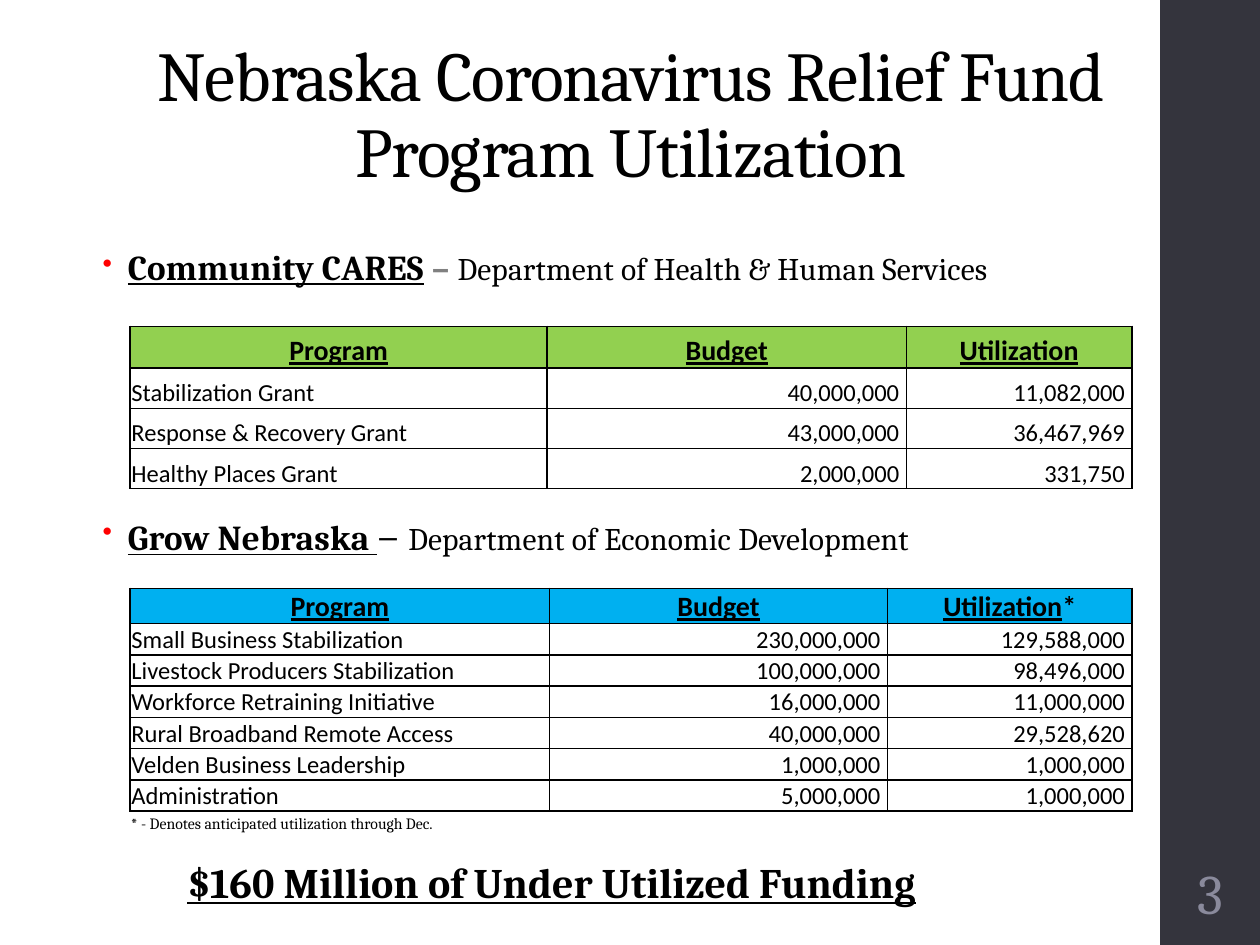
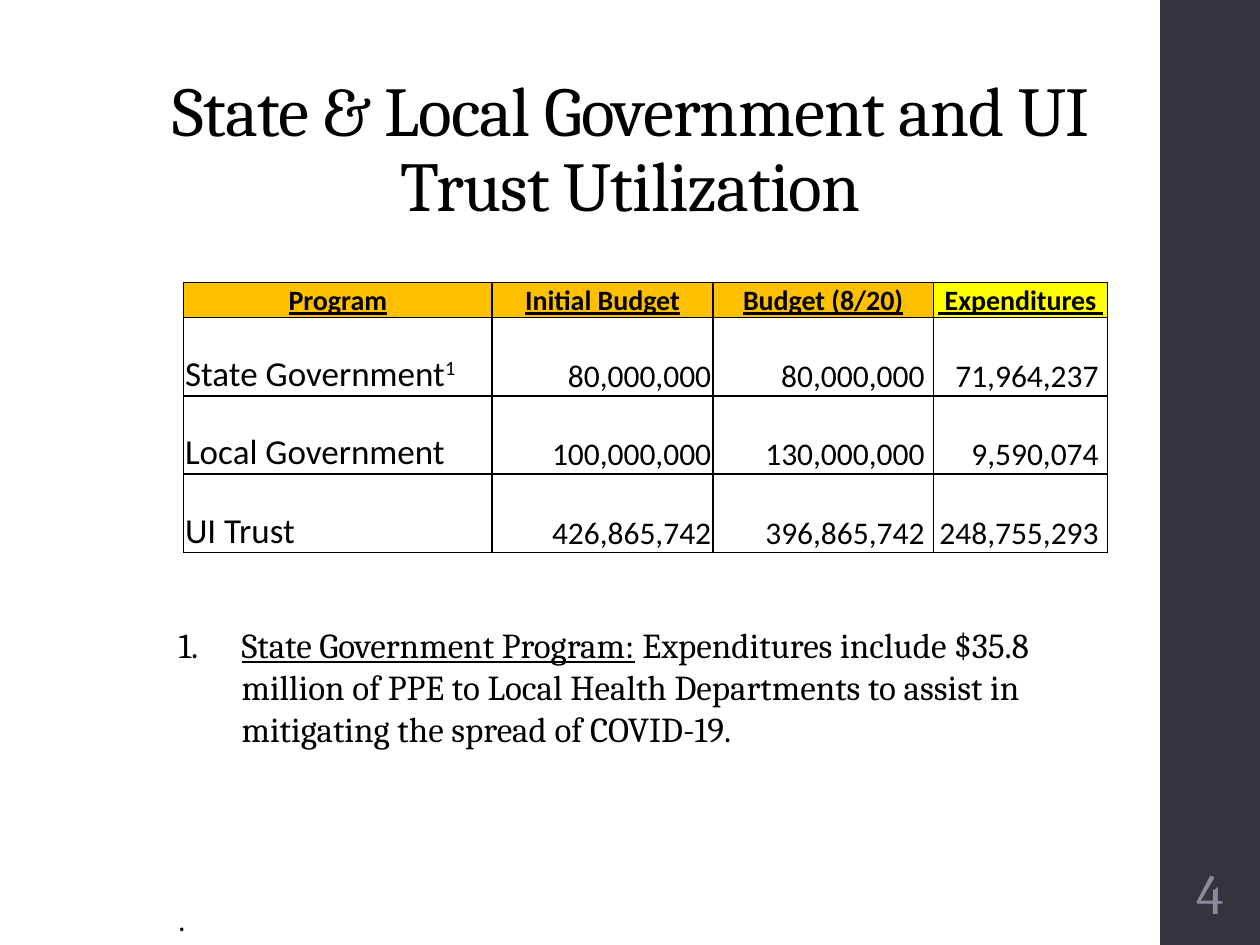
"""Build two slides on relief fund budgets and their utilization."""
from lxml import etree
from pptx import Presentation
from pptx import util as u
from pptx.dml.color import RGBColor
from pptx.enum import shapes, text
from pptx.oxml.ns import qn

SERIF, SANS = "Cambria", "Calibri"
BLACK, BAND, PALE, GREY, RED = "000000", "34343D", "8A8A9C", "808080", "FF0000"
GREEN, BLUE, GOLD, YELLOW = "92D050", "00B0F0", "FFC000", "FFFF00"
ALIGN = text.PP_ALIGN
BOLD, LINE, BOTH = {"bold": True}, {"underline": True}, {"bold": True, "underline": True}

CARES = {
    "at": (2.62, 6.58), "cols": (8.41, 7.24, 4.55), "rows": (0.84, 0.81),
    "fills": (GREEN,) * 3, "sizes": (14, 14, 14), "pads": (0.03, 0.14, 0.14),
    "head": ("Program", "Budget", "Utilization"),
    "body": [
        ("Stabilization Grant", "40,000,000", "11,082,000"),
        ("Response & Recovery Grant", "43,000,000", "36,467,969"),
        ("Healthy Places Grant", "2,000,000", "331,750"),
    ],
}
GROW = {
    "at": (2.62, 11.86), "cols": (8.46, 6.81, 4.93), "rows": (0.71, 0.63),
    "fills": (BLUE,) * 3, "sizes": (14, 14, 14), "pads": (0.03, 0.14, 0.14),
    "head": ("Program", "Budget", [("Utilization", BOTH), ("*", BOLD)]),
    "body": [
        ("Small Business Stabilization", "230,000,000", "129,588,000"),
        ("Livestock Producers Stabilization", "100,000,000", "98,496,000"),
        ("Workforce Retraining Initiative", "16,000,000", "11,000,000"),
        ("Rural Broadband Remote Access", "40,000,000", "29,528,620"),
        ("Velden Business Leadership", "1,000,000", "1,000,000"),
        ("Administration", "5,000,000", "1,000,000"),
    ],
}
STATE = {
    "at": (3.7, 5.69), "cols": (6.22, 4.45, 4.45, 3.51), "rows": (0.71, 1.58),
    "fills": (GOLD, GOLD, GOLD, YELLOW), "sizes": (20, 18, 18, 18),
    "pads": (0.03, 0.03, 0.18, 0.18),
    "head": ("Program", "Initial Budget", "Budget (8/20)", " Expenditures "),
    "body": [
        ([("State Government", {}), ("1", {"raised": True})],
         "80,000,000", "80,000,000", "71,964,237"),
        ("Local Government", "100,000,000", "130,000,000", "9,590,074"),
        ("UI Trust", "426,865,742", "396,865,742", "248,755,293"),
    ],
}
HEADS = [
    (4.88, [("Community CARES", BOTH), (" ", BOLD), ("– ", {"bold": True, "color": GREY}),
            ("Department of Health & Human Services", {"size": 18})]),
    (10.21, [("Grow Nebraska ", BOTH), ("– ", {"size": 24}),
             ("Department of Economic Development", {"size": 18})]),
]
NOTE = [
    ("State Government Program:", LINE),
    (" Expenditures include $35.8 million of PPE to Local Health Departments"
     " to assist in mitigating the spread of COVID-19.", {}),
]
SLIDES = [
    {"title": "Nebraska Coronavirus Relief Fund Program Utilization",
     "top": 0.33, "page": "3", "tables": [CARES, GROW]},
    {"title": "State & Local Government and UI Trust Utilization",
     "top": 1.02, "page": "4", "tables": [STATE]},
]


def rgb(code):
    """Turn a hex string into a colour."""
    return RGBColor.from_string(code)


def node(root, tag, **attrs):
    """Append a drawing element with attributes."""
    return etree.SubElement(root, qn("a:" + tag), {k: str(v) for k, v in attrs.items()})


def write(par, runs, size, face=SERIF, color=BLACK, align=ALIGN.LEFT, track=0, base=None):
    """Write plain text or styled runs into a paragraph."""
    font = par.font
    font.name, font.size, font.color.rgb = face, u.Pt(size), rgb(color)
    par.alignment = align
    for words, style in [(runs, {})] if isinstance(runs, str) else runs:
        style = {**(base or {}), **style}
        run = par.add_run()
        run.text = words
        font = run.font
        font.name, font.size = face, u.Pt(style.get("size", size))
        font.color.rgb = rgb(style.get("color", color))
        font.bold, font.underline = style.get("bold", False), style.get("underline", False)
        props = run._r.get_or_add_rPr()
        if track:
            props.set("spc", str(track))
        if style.get("raised"):
            props.set("baseline", "30000")


def add_box(slide, *area):
    """Add a wrapping text box and return its frame."""
    frame = slide.shapes.add_textbox(*map(u.Cm, area)).text_frame
    frame.word_wrap = True
    return frame


def hang(par, depth, *marks):
    """Give a paragraph a hanging indent and bullet marks."""
    props = par._p.get_or_add_pPr()
    props.set("marL", str(u.Cm(depth)))
    props.set("indent", str(-u.Cm(depth)))
    for tag, attrs in marks:
        mark = node(props, tag, **attrs)
        if tag == "buClr":
            node(mark, "srgbClr", val=RED)
    for tail in props.findall(qn("a:defRPr")):
        props.append(tail)


def edge(cell):
    """Draw a thin black line on each side of a cell."""
    props = cell._tc.get_or_add_tcPr()
    for side in ("lnL", "lnR", "lnT", "lnB"):
        line = node(props, side, w=u.Pt(1))
        node(node(line, "solidFill"), "srgbClr", val=BLACK)


def add_grid(slide, data):
    """Add a budget table with a coloured head row."""
    rows = [data["head"], *data["body"]]
    cols, (first, rest) = data["cols"], data["rows"]
    highs = [first] + [rest] * len(data["body"])
    area = (*data["at"], sum(cols), sum(highs))
    grid = slide.shapes.add_table(len(rows), len(cols), *map(u.Cm, area)).table
    grid.first_row = grid.horz_banding = False
    for col, wide in zip(grid.columns, cols):
        col.width = u.Cm(wide)
    for r, (row, high) in enumerate(zip(rows, highs)):
        grid.rows[r].height = u.Cm(high)
        for c, words in enumerate(row):
            cell = grid.cell(r, c)
            edge(cell)
            cell.vertical_anchor = text.MSO_ANCHOR.BOTTOM
            cell.margin_left = cell.margin_right = cell.margin_top = u.Cm(0.03)
            cell.margin_bottom = 0
            par = cell.text_frame.paragraphs[0]
            if r == 0:
                cell.fill.solid()
                cell.fill.fore_color.rgb = rgb(data["fills"][c])
                base = BOTH if isinstance(words, str) else None
                write(par, words, 16, SANS, align=ALIGN.CENTER, base=base)
            else:
                cell.fill.background()
                cell.margin_right = u.Cm(data["pads"][c])
                write(par, words, data["sizes"][c], SANS,
                      align=ALIGN.RIGHT if c else ALIGN.LEFT)


def add_slide(deck, data):
    """Add a slide with its side band, title, page number and tables."""
    slide = deck.slides.add_slide(deck.slide_layouts[5])
    band = slide.shapes.add_shape(shapes.MSO_SHAPE.RECTANGLE,
                                  *map(u.Cm, (23.39, 0, 2.01, 19.05)))
    band.shadow.inherit = False
    band.fill.solid()
    band.fill.fore_color.rgb = rgb(BAND)
    band.line.fill.background()

    title = slide.shapes.title
    title.left, title.top, title.width, title.height = map(
        u.Cm, (2.62, data["top"], 20.19, 3.68))
    frame = title.text_frame
    frame.word_wrap, frame.auto_size = True, text.MSO_AUTO_SIZE.NONE
    frame.vertical_anchor = text.MSO_ANCHOR.BOTTOM
    frame.paragraphs[0].line_spacing = 0.9
    write(frame.paragraphs[0], data["title"], 40, align=ALIGN.CENTER, track=-50)

    page = add_box(slide, 23.44, 17.15, 1.91, 1.65)
    page.margin_left = page.margin_right = u.Cm(0.08)
    page.vertical_anchor = text.MSO_ANCHOR.MIDDLE
    write(page.paragraphs[0], data["page"], 32, color=PALE, align=ALIGN.CENTER)
    for grid in data["tables"]:
        add_grid(slide, grid)
    return slide


def add_heads(slide):
    """Add the bulleted table headings, the footnote and the total."""
    for top, runs in HEADS:
        par = add_box(slide, 1.82, top, 21.4, 1.2).paragraphs[0]
        par.line_spacing = 0.95
        write(par, runs, 20, track=10)
        hang(par, 0.51, ("buClr", {}), ("buSzPct", {"val": 80000}),
             ("buChar", {"char": "•"}))
    foot = add_box(slide, 2.39, 16.28, 15.85, 0.64)
    write(foot.paragraphs[0], "* - Denotes anticipated utilization through Dec.", 9)
    total = add_box(slide, 3.53, 17.15, 18.36, 1.27)
    write(total.paragraphs[0], "$160 Million of Under Utilized Funding", 24, base=BOTH)


def add_note(slide):
    """Add the numbered note and the closing mark."""
    frame = add_box(slide, 3.35, 12.45, 18.75, 6.4)
    par = frame.paragraphs[0]
    write(par, NOTE, 20)
    hang(par, 1.27, ("buAutoNum", {"type": "arabicPeriod"}))
    last = frame.add_paragraph()
    last.space_before = u.Pt(86)
    write(last, ".", 18)


def main():
    """Build and save the deck."""
    deck = Presentation()
    deck.slide_width, deck.slide_height = u.Cm(25.4), u.Cm(19.05)
    for data, extra in zip(SLIDES, (add_heads, add_note)):
        extra(add_slide(deck, data))
    deck.save("out.pptx")


if __name__ == "__main__":
    main()
